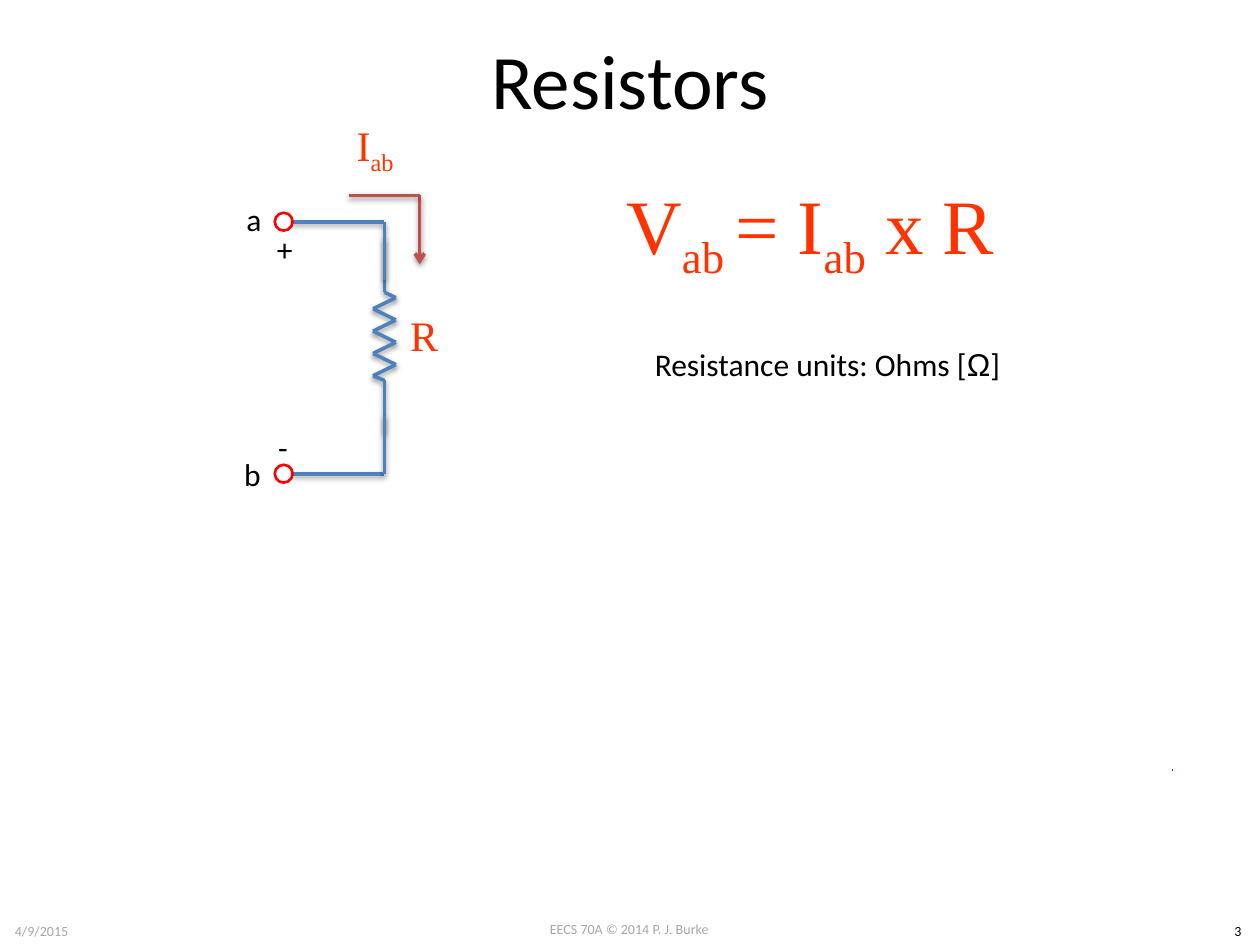
from pptx import Presentation, util as u
from pptx.dml.color import RGBColor
from pptx.enum import shapes, text
from pptx.oxml import parse_xml
from pptx.oxml.ns import nsdecls

Cm = u.Cm
BLUE, RED, RING = "4F81BD", "C0504D", "FF0000"
BLACK, GREY, ORANGE = "000000", "A6A6A6", "FF3300"
SANS, SERIF = "Calibri", "Times New Roman"
LEFT, MID = text.PP_ALIGN.LEFT, text.PP_ALIGN.CENTER
SHADE = f"""<a:effectLst {nsdecls('a')}>
<a:outerShdw blurRad="40000" dist="20000" dir="5400000" rotWithShape="0">
<a:srgbClr val="000000"><a:alpha val="38000"/></a:srgbClr>
</a:outerShdw></a:effectLst>"""

deck = Presentation()
deck.slide_width, deck.slide_height = Cm(25.4), Cm(19.05)
slide = deck.slides.add_slide(deck.slide_layouts[6])
parts = slide.shapes


def wire(start, end, tint=BLUE, arrow=False):
    line = parts.add_connector(shapes.MSO_CONNECTOR.STRAIGHT,
                               *map(Cm, start + end))
    line.line.color.rgb = RGBColor.from_string(tint)
    line.line.width = u.Pt(2)
    if arrow:
        line.line._get_or_add_ln().append(
            parse_xml(f'<a:tailEnd {nsdecls("a")} type="arrow"/>'))
    line._element.spPr.append(parse_xml(SHADE))


def label(area, runs, size, tint=BLACK, face=SANS, align=MID,
          wrap=True, middle=False):
    """Each run is (words, baseline percent, own font or None)."""
    frame = parts.add_textbox(*map(Cm, area)).text_frame
    frame.word_wrap = wrap
    if middle:
        frame.vertical_anchor = text.MSO_ANCHOR.MIDDLE
    para = frame.paragraphs[0]
    para.alignment = align
    para.font.size = u.Pt(size)
    para.font.name = face
    para.font.color.rgb = RGBColor.from_string(tint)
    for words, base, own in runs:
        run = para.add_run()
        run.text = words
        run.font.size = u.Pt(size)
        run.font.name = own or face
        run.font.color.rgb = RGBColor.from_string(tint)
        if base:
            run._r.get_or_add_rPr().set("baseline", str(base * 1000))


# Footer and title
label((9.73, 18.44, 5.92, 0.61),
      [("EECS 70A © 2014 P. J. Burke", 0, None)], 8, GREY)
label((24.51, 18.47, 0.89, 0.61), [("3", 0, None)], 8)
label((0.05, 18.47, 5.26, 0.58), [("4/9/2015", 0, None)], 8, GREY,
      align=LEFT, middle=True)
label((1.27, 0, 22.86, 3.18), [("Resistors", 0, None)], 44, middle=True)

# Resistor: leads and eight zigzag corners
axis = 7.75
zig = [(axis + (-0.23 if i % 2 else 0.23), 6 + 0.225 * i) for i in range(8)]
trail = [(axis, 4.8), (axis, 5.66), (axis, 5.89), *zig,
         (axis, 7.67), (axis, 7.9), (axis, 8.74)]
for start, end in zip(trail, trail[1:]):
    wire(start, end)

# Wires to the terminals
for level, inner in ((4.47, 5.64), (9.55, 8.38)):
    wire((5.89, level), (axis, level))
    wire((axis, level), (axis, inner))
    ring = parts.add_shape(shapes.MSO_SHAPE.OVAL, Cm(5.54),
                           Cm(level - 0.18), Cm(0.36), Cm(0.36))
    ring.shadow.inherit = False
    ring.fill.background()
    ring.line.color.rgb = RGBColor.from_string(RING)
    ring.line.width = u.Pt(1.5)

# Terminal names and signs
for sign, left, top, wide in (("a", 4.72, 3.91, 0.81), ("b", 4.67, 9.04, 0.86),
                              ("+", 5.33, 4.52, 0.84), ("-", 5.36, 8.51, 0.71)):
    label((left, top, wide, 1.02), [(sign, 0, None)], 18,
          align=LEFT, wrap=False)

# Current arrow
wire((8.46, 3.94), (8.46, 5.33), RED, arrow=True)
wire((7.04, 3.94), (8.46, 3.94), RED)

# Symbols and formula
label((6.05, 2.06, 3.02, 1.85), [("I", 0, None), ("ab", -25, None)],
      24, ORANGE, SERIF, middle=True)
label((7.04, 5.82, 3.02, 1.85), [("R", 0, None)],
      24, ORANGE, SERIF, middle=True)
label((10.8, 3.35, 11.46, 2.57),
      [("V", 0, None), ("ab ", -25, None), ("= I", 0, None),
       ("ab", -25, None), (" x R ", 0, None)],
      44, ORANGE, SERIF, middle=True)
label((12.95, 6.83, 7.57, 1.02),
      [("Resistance units: Ohms [", 0, None), ("Ω", 0, "Arial"),
       ("]", 0, None)], 18, align=LEFT, wrap=False)

# Small red pen dot
pen = parts.build_freeform(Cm(23.62), Cm(15.52))
pen.add_line_segments([(Cm(23.64), Cm(15.52))], close=False)
dot = pen.convert_to_shape()
dot.shadow.inherit = False
dot.fill.background()
dot.line.color.rgb = RGBColor.from_string(RING)
dot.line.width = u.Pt(1.5)

deck.save("out.pptx")
